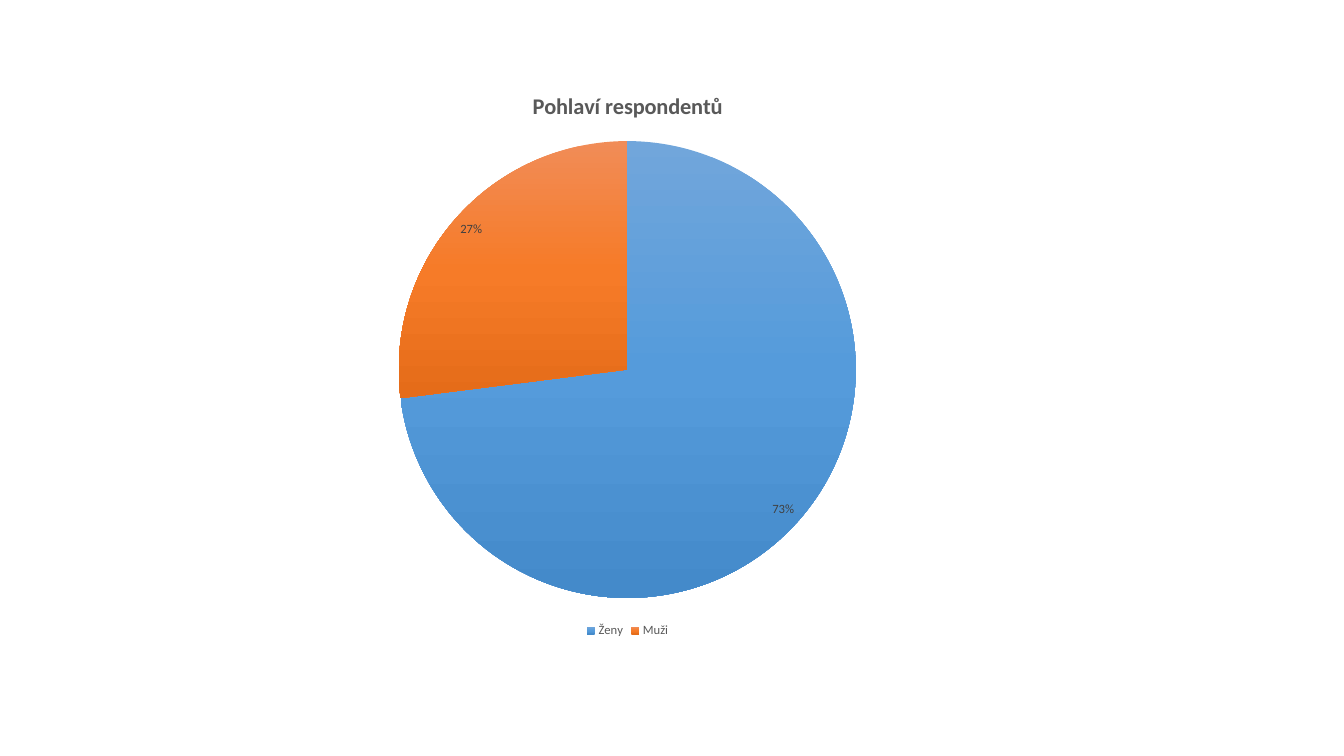
from copy import deepcopy
from typing import NamedTuple

from lxml import etree
from pptx import Presentation
from pptx.chart.chart import Chart
from pptx.chart.data import CategoryChartData
from pptx.dml.color import RGBColor
from pptx.enum.chart import XL_CHART_TYPE, XL_LABEL_POSITION, XL_LEGEND_POSITION
from pptx.oxml.ns import qn
from pptx.text.text import Font
from pptx.util import Inches, Pt

PIE = XL_CHART_TYPE.PIE
INSIDE_END = XL_LABEL_POSITION.INSIDE_END
BOTTOM = XL_LEGEND_POSITION.BOTTOM
FONT = "Calibri"
GREY = "595959"
SLIDE_W, SLIDE_H = Inches(13.33), Inches(7.5)


class Box(NamedTuple):
    """A frame given as shares of its container."""
    x: float
    y: float
    w: float
    h: float


class Slice(NamedTuple):
    """A pie slice with its gradient from top to bottom."""
    name: str
    percent: int
    colors: tuple[str, str, str]


CHART_BOX = Box(0.1905, 0.092, 0.553, 0.7573)
PIE_BOX = Box(0.192, 0.125, 0.615, 0.798)
SLICES = [
    Slice("Ženy", 73, ("71A6DB", "559BDB", "448ACA")),
    Slice("Muži", 27, ("F18C57", "F67B28", "E56C19")),
]


def rgb(color: str) -> RGBColor:
    """Turn a hex string into a colour."""
    return RGBColor.from_string(color)


def style(font: Font, size: float, color: str, bold: bool = False) -> None:
    """Set the format of a font."""
    font.name, font.size, font.bold = FONT, Pt(size), bold
    font.color.rgb = rgb(color)


def add_title(chart: Chart, text: str, **fmt) -> None:
    """Give the chart a title with the given format."""
    tf = chart.chart_title.text_frame
    r = tf.paragraphs[0].add_run()
    r.text = text
    style(r.font, **fmt)
    chart.chart_title.include_in_layout = False


def place_pie(chart: Chart, box: Box) -> None:
    """Fix the inner plot area within the chart."""
    area = chart._chartSpace.find(f".//{qn('c:plotArea')}")
    for old in area.findall(qn("c:layout")):
        area.remove(old)
    layout = etree.Element(qn("c:layout"))
    manual = etree.SubElement(layout, qn("c:manualLayout"))
    settings = {"layoutTarget": "inner", "xMode": "edge", "yMode": "edge", **box._asdict()}
    for tag, value in settings.items():
        etree.SubElement(manual, qn(f"c:{tag}")).set("val", str(value))
    area.insert(0, layout)


def paint_slices(chart: Chart, slices: list[Slice]) -> None:
    """Fill each slice with its three-colour gradient."""
    points = chart.plots[0].series[0].points
    fills = [points[i].format.fill for i in range(len(slices))]
    for fill in fills:
        fill.gradient()
        fill.gradient_angle = 270
    for stops in chart._chartSpace.iter(qn("a:gsLst")):
        stops.append(deepcopy(stops[-1]))
    for fill, item in zip(fills, slices):
        for i, (stop, color) in enumerate(zip(fill.gradient_stops, item.colors)):
            stop.position = i / 2
            stop.color.rgb = rgb(color)


def main() -> None:
    """Build the slide and save it."""
    prs = Presentation()
    prs.slide_width, prs.slide_height = SLIDE_W, SLIDE_H
    s = prs.slides.add_slide(prs.slide_layouts[6])

    data = CategoryChartData()
    data.categories = [item.name for item in SLICES]
    data.add_series("Series 1", [item.percent for item in SLICES])
    x, y, w, h = CHART_BOX
    frame = s.shapes.add_chart(PIE, int(x * SLIDE_W), int(y * SLIDE_H),
                               int(w * SLIDE_W), int(h * SLIDE_H), data)
    chart = frame.chart
    style(chart.font, 10, "000000")
    add_title(chart, "Pohlaví respondentů", size=16, color=GREY, bold=True)
    place_pie(chart, PIE_BOX)
    paint_slices(chart, SLICES)

    chart.has_legend = True
    chart.legend.position = BOTTOM
    chart.legend.include_in_layout = False
    style(chart.legend.font, 9, GREY)

    plot = chart.plots[0]
    plot.vary_by_categories = True
    plot.has_data_labels = True
    labels = plot.data_labels
    labels.show_percentage, labels.show_value = True, False
    labels.number_format, labels.number_format_is_linked = "0%", False
    labels.position = INSIDE_END
    style(labels.font, 9, "404040")

    prs.save("out.pptx")


if __name__ == "__main__":
    main()
